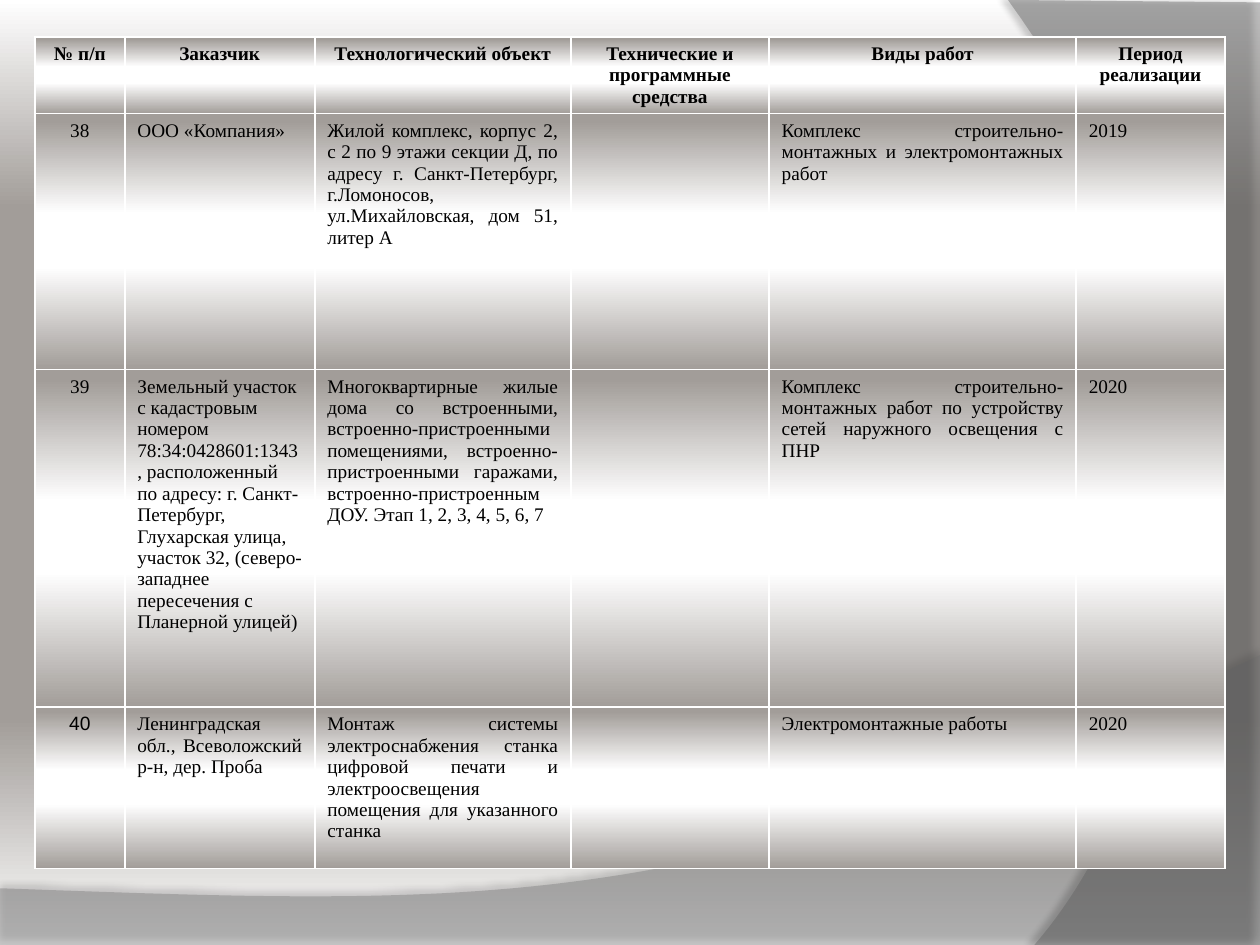
from lxml.etree import SubElement
from pptx import Presentation
from pptx.dml.color import RGBColor
from pptx.enum.text import PP_ALIGN as Align
from pptx.oxml import parse_xml
from pptx.oxml.ns import nsdecls, qn
from pptx.util import Pt

COLORS = {
    "white": "FFFFFF",
    "warm_gray": "A29D99",
    "bottom_wave": "7F7F7F",
    "right_wave": "5E5E5E",
    "black": "000000",
}
PAGE_STOPS = [(0, "white"), (22, "warm_gray"), (76, "warm_gray"), (100, "white")]
CELL_STOPS = [(3, "warm_gray"), (39, "white"), (60, "white"), (100, "warm_gray")]


def vertical_gradient(stops):
    marks = "".join(
        f'<a:gs pos="{position * 1000}"><a:srgbClr val="{COLORS[name]}"/></a:gs>'
        for position, name in stops
    )
    return parse_xml(
        f'<a:gradFill {nsdecls("a")} rotWithShape="1"><a:gsLst>{marks}</a:gsLst>'
        '<a:lin ang="5400000" scaled="0"/></a:gradFill>'
    )


def curve_points(start, control_1, control_2, end, steps=60):
    points = []
    for step in range(1, steps + 1):
        t = step / steps
        weights = ((1 - t) ** 3, 3 * t * (1 - t) ** 2, 3 * t * t * (1 - t), t ** 3)
        corners = (start, control_1, control_2, end)
        points.append(tuple(
            Pt(sum(w * corner[axis] for w, corner in zip(weights, corners)))
            for axis in (0, 1)
        ))
    return points


deck = Presentation()
deck.slide_width, deck.slide_height = Pt(720), Pt(540)
page = deck.slides.add_slide(deck.slide_layouts[6])

# Background
page.background.fill.solid()
backdrop = page.background._cSld.find(qn("p:bg")).find(qn("p:bgPr"))
backdrop.replace(backdrop[0], vertical_gradient(PAGE_STOPS))

# Translucent waves: straight corners, curve, fill, opacity, shadow
waves = [
    ([(0, 507.6), (0, 540), (720, 540), (720, 374.4)],
     [(402.5, 524.9), (281.5, 517.7), (0, 507.6)],
     "bottom_wave", 45, (35, 4, 3.5, 270)),
    ([(720, 1.4), (720, 540), (591.1, 540)],
     [(673.2, 445.7), (733, 216), (576, 0)],
     "right_wave", 40, (45, 4, 4, 180)),
]
for corners, curve, color, opacity, (shade, blur, distance, angle) in waves:
    outline = page.shapes.build_freeform(Pt(corners[0][0]), Pt(corners[0][1]))
    outline.add_line_segments([(Pt(x), Pt(y)) for x, y in corners[1:]], close=False)
    outline.add_line_segments(curve_points(corners[-1], *curve), close=True)
    wave = outline.convert_to_shape()
    wave.line.fill.background()
    wave.fill.solid()
    wave.fill.fore_color.rgb = RGBColor.from_string(COLORS[color])
    tint = wave._element.spPr.find(qn("a:solidFill"))[0]
    SubElement(tint, qn("a:alpha"), val=str(opacity * 1000))
    wave._element.spPr.append(parse_xml(
        f'<a:effectLst {nsdecls("a")}><a:outerShdw blurRad="{Pt(blur)}" '
        f'dist="{Pt(distance)}" dir="{angle * 60000}" algn="ctr" rotWithShape="0">'
        f'<a:srgbClr val="{COLORS["black"]}"><a:alpha val="{shade * 1000}"/>'
        '</a:srgbClr></a:outerShdw></a:effectLst>'
    ))

# Project table
rows = [
    ["№ п/п", "Заказчик", "Технологический объект",
     "Технические и программные средства", "Виды работ", "Период реализации"],
    ["38", "ООО «Компания»",
     "Жилой комплекс, корпус 2, с 2 по 9 этажи секции Д, по адресу "
     "г. Санкт-Петербург, г.Ломоносов, ул.Михайловская, дом 51, литер А",
     "", "Комплекс строительно-монтажных и электромонтажных работ", "2019"],
    ["39",
     "Земельный участок с кадастровым номером 78:34:0428601:1343, "
     "расположенный по адресу: г. Санкт-Петербург, Глухарская улица, "
     "участок 32, (северо-западнее пересечения с Планерной улицей)",
     "Многоквартирные жилые дома со встроенными, встроенно-пристроенными "
     "помещениями, встроенно-пристроенными гаражами, "
     "встроенно-пристроенным ДОУ. Этап 1, 2, 3, 4, 5, 6, 7",
     "", "Комплекс строительно-монтажных работ по устройству сетей "
     "наружного освещения с ПНР", "2020"],
    ["40", "Ленинградская обл., Всеволожский р-н, дер. Проба",
     "Монтаж системы электроснабжения станка цифровой печати и "
     "электроосвещения помещения для указанного станка",
     "", "Электромонтажные работы", "2020"],
]
widths = [51.3, 108.6, 146.3, 113.3, 175.5, 85]
heights = [43.2, 146.2, 193, 92.2]
body_aligns = [Align.CENTER, Align.LEFT, Align.JUSTIFY,
               Align.LEFT, Align.JUSTIFY, Align.LEFT]

table = page.shapes.add_table(
    len(rows), len(widths), Pt(20), Pt(21), Pt(sum(widths)), Pt(sum(heights))
).table
table.first_row = table.horz_banding = False
for column, width in zip(table.columns, widths):
    column.width = Pt(width)
for row, height in zip(table.rows, heights):
    row.height = Pt(height)

for row_index, texts in enumerate(rows):
    is_header, is_last = row_index == 0, row_index == len(rows) - 1
    for column_index, text in enumerate(texts):
        cell = table.cell(row_index, column_index)

        # White borders and gradient fill
        properties = cell._tc.get_or_add_tcPr()
        for side in ("lnL", "lnR", "lnT", "lnB"):
            properties.append(parse_xml(
                f'<a:{side} {nsdecls("a")} w="{Pt(1)}"><a:solidFill>'
                f'<a:srgbClr val="{COLORS["white"]}"/></a:solidFill></a:{side}>'
            ))
        properties.append(vertical_gradient(CELL_STOPS))

        # Text
        if not text:
            continue
        para = cell.text_frame.paragraphs[0]
        para.alignment = Align.CENTER if is_header else body_aligns[column_index]
        if is_last and column_index > 0:
            para.alignment = Align.JUSTIFY
        span = para.add_run()
        span.text = text
        span.font.size = Pt(11)
        span.font.bold = is_header
        span.font.name = "Arial" if text == "40" else "Times New Roman"
        span.font.color.rgb = RGBColor.from_string(COLORS["black"])

deck.save("out.pptx")
